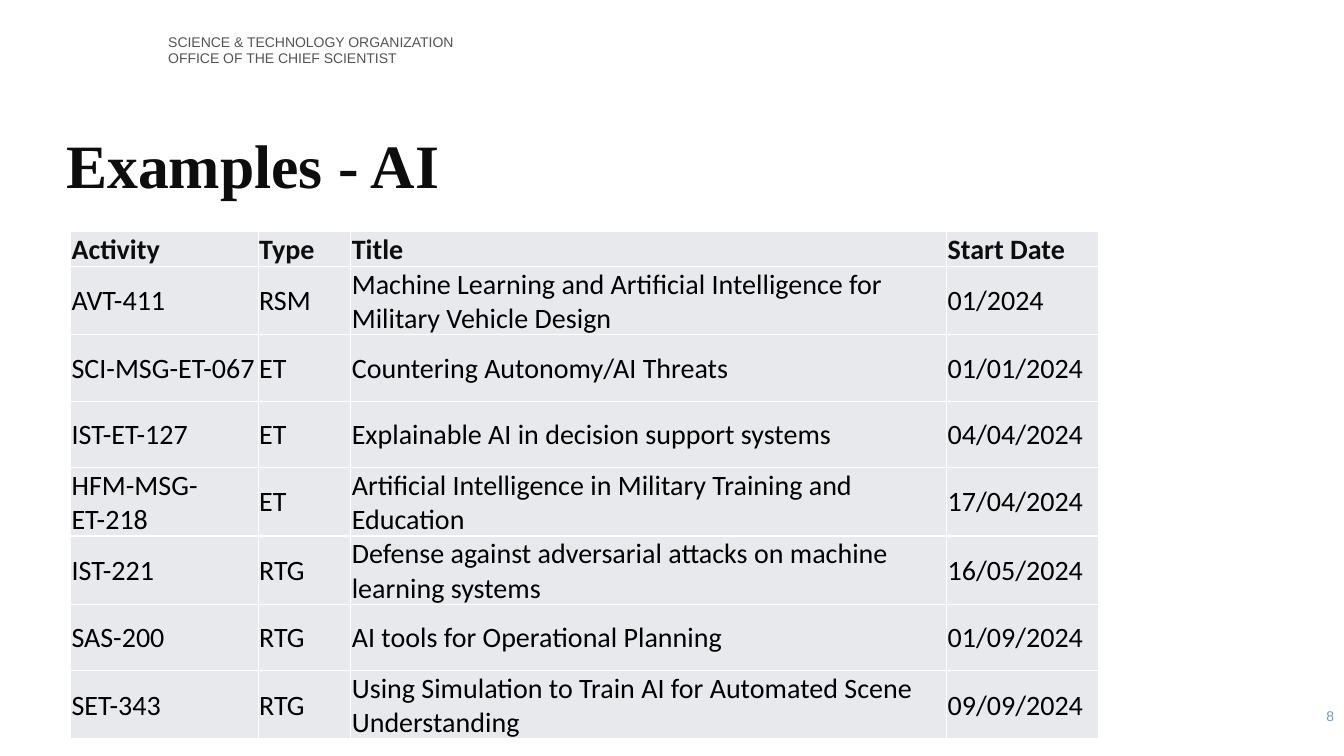
from dataclasses import dataclass

from lxml.etree import SubElement
from pptx import Presentation
from pptx.dml.color import RGBColor as RGB
from pptx.enum.text import MSO_ANCHOR as Anchor, PP_ALIGN as Align
from pptx.oxml.ns import qn
from pptx.util import Inches, Pt


@dataclass(frozen=True)
class Theme:
    header: tuple = ("Arial", 10, "545454", False)
    title: tuple = ("Times New Roman", 44, "0D0D0D", True)
    column_head: tuple = ("Calibri", 20, "0D0D0D", True)
    entry: tuple = ("Calibri", 20, "000000", False)
    page_number: tuple = ("Arial", 10, "719AC1", False)
    cell_fill: str = "E7E9ED"
    border: str = "FFFFFF"
    border_width: int = 1


THEME = Theme()

COLUMN_WIDTHS = [1.86, 0.92, 5.91, 1.51]
ROW_HEIGHTS = [0.33] + [0.66] * 6 + [0.33]
ACTIVITIES = [
    ("Activity", "Type", "Title", "Start Date"),
    ("AVT-411", "RSM",
     "Machine Learning and Artificial Intelligence for Military Vehicle Design", "01/2024"),
    ("SCI-MSG-ET-067", "ET", "Countering Autonomy/AI Threats", "01/01/2024"),
    ("IST-ET-127", "ET", "Explainable AI in decision support systems", "04/04/2024"),
    ("HFM-MSG-ET-218", "ET",
     "Artificial Intelligence in Military Training and Education", "17/04/2024"),
    ("IST-221", "RTG",
     "Defense against adversarial attacks on machine learning systems", "16/05/2024"),
    ("SAS-200", "RTG", "AI tools for Operational Planning", "01/09/2024"),
    ("SET-343", "RTG",
     "Using Simulation to Train AI for Automated Scene Understanding", "09/09/2024"),
]


def set_attributes(target, values):
    for key, value in values.items():
        setattr(target, key, value)


def write_lines(frame, lines, style, **paragraph_format):
    face, size, color, bold = style
    for index, line in enumerate(lines):
        paragraph = frame.add_paragraph() if index else frame.paragraphs[0]
        set_attributes(paragraph, paragraph_format)
        run = paragraph.add_run()
        run.text = line
        set_attributes(run.font, {"name": face, "size": Pt(size), "bold": bold})
        run.font.color.rgb = RGB.from_string(color)


def add_text(slide, box, lines, style, **paragraph_format):
    frame = slide.shapes.add_textbox(*map(Inches, box)).text_frame
    set_attributes(frame, {"word_wrap": True, "vertical_anchor": Anchor.MIDDLE})
    write_lines(frame, lines, style, **paragraph_format)


def add_borders(cell):
    properties = cell._tc.get_or_add_tcPr()
    for side in ("a:lnL", "a:lnR", "a:lnT", "a:lnB"):
        line = SubElement(properties, qn(side), w=str(Pt(THEME.border_width)))
        SubElement(SubElement(line, qn("a:solidFill")), qn("a:srgbClr"), val=THEME.border)


def fill_cell(cell, text, style):
    set_attributes(cell, {
        "vertical_anchor": Anchor.MIDDLE,
        "margin_left": Inches(0.01),
        "margin_right": Inches(0.01),
        "margin_top": Inches(0.01),
        "margin_bottom": 0,
    })
    add_borders(cell)
    cell.fill.solid()
    cell.fill.fore_color.rgb = RGB.from_string(THEME.cell_fill)
    write_lines(cell.text_frame, [text], style)


def add_activity_table(slide, left, top):
    box = (left, top, sum(COLUMN_WIDTHS), sum(ROW_HEIGHTS))
    table = slide.shapes.add_table(
        len(ROW_HEIGHTS), len(COLUMN_WIDTHS), *map(Inches, box)).table
    set_attributes(table, {"first_row": False, "horz_banding": False})
    for column, width in zip(table.columns, COLUMN_WIDTHS):
        column.width = Inches(width)
    for row, height in zip(table.rows, ROW_HEIGHTS):
        row.height = Inches(height)
    for row_index, activity in enumerate(ACTIVITIES):
        style = THEME.entry if row_index else THEME.column_head
        for column_index, text in enumerate(activity):
            fill_cell(table.cell(row_index, column_index), text, style)


def main():
    deck = Presentation()
    set_attributes(deck, {"slide_width": Inches(13.33), "slide_height": Inches(7.5)})
    slide = deck.slides.add_slide(deck.slide_layouts[6])

    # Organization header and title
    add_text(slide, (1.57, 0.2, 5.91, 0.59),
             ["SCIENCE & TECHNOLOGY ORGANIZATION", "OFFICE OF THE CHIEF SCIENTIST"],
             THEME.header)
    add_text(slide, (0.56, 1.22, 11.5, 0.91), ["Examples - AI"], THEME.title,
             line_spacing=0.9)

    # Activities
    add_activity_table(slide, 0.7, 2.3)

    # Page number
    add_text(slide, (10.33, 6.9, 3, 0.4), ["8"], THEME.page_number,
             alignment=Align.RIGHT)

    deck.save("out.pptx")


if __name__ == "__main__":
    main()
